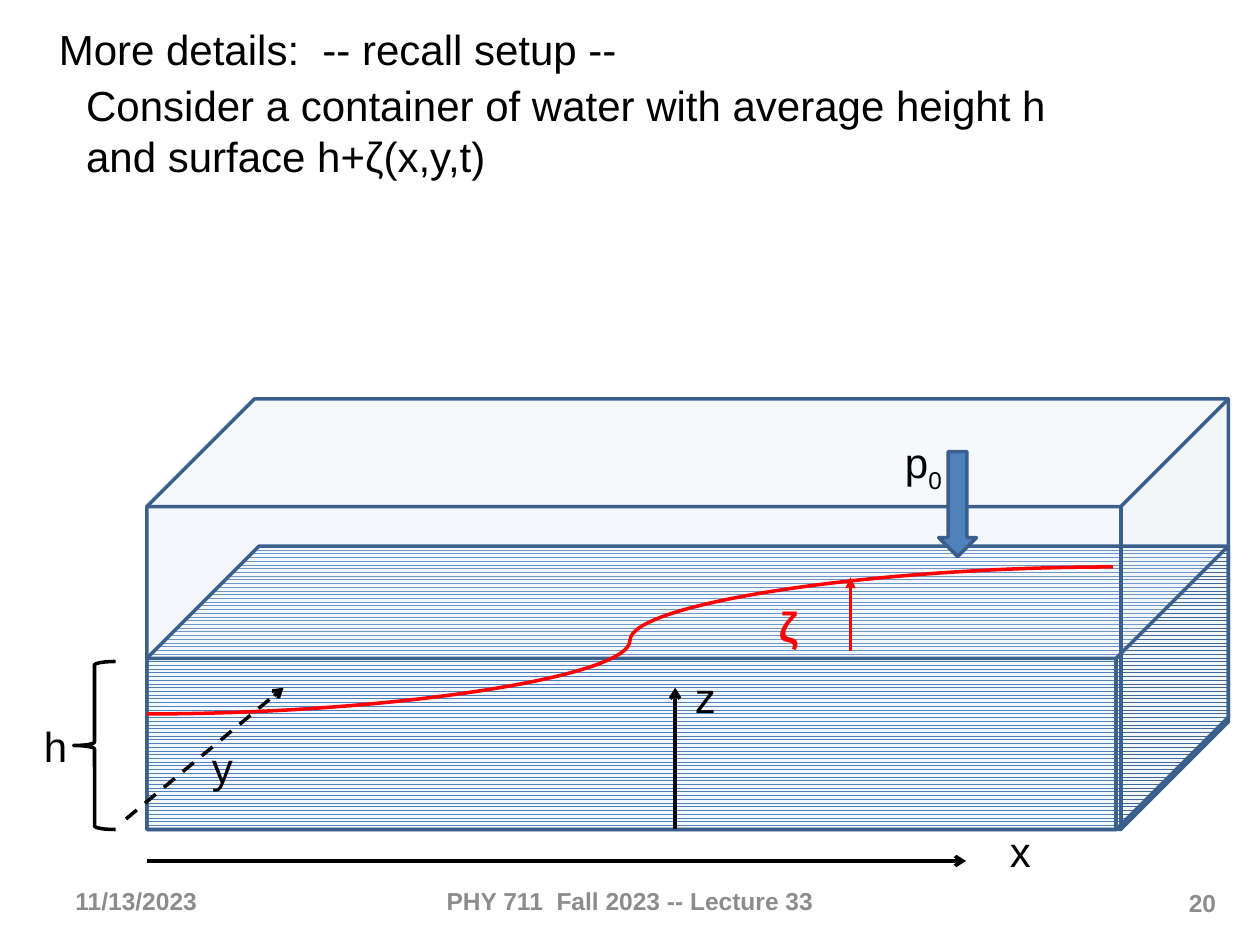
"""Build a lecture slide showing a water container with a surface wave."""
from dataclasses import dataclass
from typing import Optional

import lxml.etree
import pptx
import pptx.dml.color
import pptx.enum.dml
import pptx.enum.shapes
import pptx.enum.text
import pptx.oxml
import pptx.oxml.ns
import pptx.util

RGB = pptx.dml.color.RGBColor
SHAPE = pptx.enum.shapes.MSO_SHAPE
LINK = pptx.enum.shapes.MSO_CONNECTOR
ALIGN = pptx.enum.text.PP_ALIGN
ANCHOR = pptx.enum.text.MSO_ANCHOR
SIZING = pptx.enum.text.MSO_AUTO_SIZE

BLACK = RGB(0x00, 0x00, 0x00)
WHITE = RGB(0xFF, 0xFF, 0xFF)
RED = RGB(0xFF, 0x00, 0x00)
GREY = RGB(0x8C, 0x8C, 0x8C)
BLUE = RGB(0x4F, 0x81, 0xBD)
EDGE = RGB(0x3A, 0x5F, 0x8C)

EMU_PER_PX = 7620
FONT = "Arial"
LINE_WIDTH = 2


@dataclass(frozen=True)
class Frame:
    left: int
    top: int
    width: int
    height: int


@dataclass(frozen=True)
class Label:
    text: str
    frame: Frame
    color: RGB = BLACK
    bold: bool = False
    subscript: str = ""


@dataclass(frozen=True)
class Footer:
    text: str
    frame: Frame
    align: ALIGN


@dataclass(frozen=True)
class Stroke:
    start: tuple[int, int]
    end: tuple[int, int]
    color: RGB = BLACK
    head: Optional[str] = "arrow"
    dashed: bool = False
    kind: LINK = LINK.STRAIGHT


TITLE = Label("More details:  -- recall setup --", Frame(44, 16, 910, 60))
BODY = Label("Consider a container of water with average height h and surface h+ζ(x,y,t)",
             Frame(70, 70, 990, 109))
WATER = Frame(140, 520, 1030, 270)
CONTAINER = Frame(140, 380, 1030, 410)
PRESSURE_ARROW = Frame(894, 430, 36, 100)
HEIGHT_BRACE = Frame(70, 630, 40, 160)

STROKES = [
    Stroke((643, 790), (643, 655)),
    Stroke((140, 820), (920, 820)),
    Stroke((120, 780), (270, 655), dashed=True),
    Stroke((140, 680), (1060, 540), RED, None, kind=LINK.CURVE),
    Stroke((810, 620), (810, 550), RED, "triangle"),
]
LABELS = [
    Label("p", Frame(850, 410, 210, 60), subscript="0"),
    Label("h", Frame(30, 680, 90, 60)),
    Label("z", Frame(650, 634, 80, 60)),
    Label("x", Frame(950, 780, 80, 60)),
    Label("y", Frame(190, 700, 80, 60)),
    Label("ζ", Frame(730, 566, 60, 60), RED, True),
]
FOOTERS = [
    Footer("11/13/2023", Frame(60, 834, 280, 48), ALIGN.LEFT),
    Footer("PHY 711  Fall 2023 -- Lecture 33", Frame(410, 834, 380, 48), ALIGN.CENTER),
    Footer("20", Frame(890, 836, 280, 48), ALIGN.RIGHT),
]


def px(length: int) -> int:
    """Turn px into EMU."""
    return pptx.util.Emu(length * EMU_PER_PX)


def bounds(frame: Frame) -> tuple[int, int, int, int]:
    """Return a frame in EMU."""
    return px(frame.left), px(frame.top), px(frame.width), px(frame.height)


def add_span(para, text: str, size: int, color: RGB, bold: bool = False):
    """Add one formatted run."""
    span = para.add_run()
    span.text = text
    span.font.name = FONT
    span.font.size = pptx.util.Pt(size)
    span.font.bold = bold
    span.font.color.rgb = color
    return span


def fill_placeholder(box, label: Label) -> None:
    """Move a placeholder and set plain left-aligned text in it."""
    box.left, box.top, box.width, box.height = bounds(label.frame)
    box.text_frame.auto_size = SIZING.NONE
    box.text_frame.vertical_anchor = ANCHOR.TOP
    para = box.text_frame.paragraphs[0]
    para.alignment = ALIGN.LEFT
    para.space_before = pptx.util.Pt(0)
    add_span(para, label.text, 24, label.color)
    properties = para._p.get_or_add_pPr()
    properties.set("marL", "0")
    properties.set("indent", "0")
    lxml.etree.SubElement(properties, pptx.oxml.ns.qn("a:buNone"))


def add_box(page, frame: Frame):
    """Add a wrapping text box."""
    box = page.shapes.add_textbox(*bounds(frame))
    box.text_frame.word_wrap = True
    return box


def add_label(page, label: Label) -> None:
    """Add a symbol with an optional subscript."""
    box = add_box(page, label.frame)
    box.text_frame.auto_size = SIZING.SHAPE_TO_FIT_TEXT
    para = box.text_frame.paragraphs[0]
    add_span(para, label.text, 24, label.color, label.bold)
    if label.subscript:
        span = add_span(para, label.subscript, 24, label.color)
        span._r.get_or_add_rPr().set("baseline", "-25000")


def add_footer(page, footer: Footer) -> None:
    """Add one footer text."""
    box = add_box(page, footer.frame)
    box.text_frame.vertical_anchor = ANCHOR.MIDDLE
    para = box.text_frame.paragraphs[0]
    para.alignment = footer.align
    add_span(para, footer.text, 14, GREY, True)


def add_outline(page, kind: SHAPE, frame: Frame, color: RGB = EDGE):
    """Add an unfilled preset shape."""
    shape = page.shapes.add_shape(kind, *bounds(frame))
    shape.shadow.inherit = False
    shape.fill.background()
    shape.line.color.rgb = color
    shape.line.width = pptx.util.Pt(LINE_WIDTH)
    return shape


def add_stroke(page, stroke: Stroke) -> None:
    """Add a line or curve with an optional arrowhead."""
    link = page.shapes.add_connector(stroke.kind, *map(px, stroke.start + stroke.end))
    link.line.color.rgb = stroke.color
    link.line.width = pptx.util.Pt(LINE_WIDTH)
    if stroke.dashed:
        link.line.dash_style = pptx.enum.dml.MSO_LINE.DASH
    if stroke.head:
        tail = lxml.etree.SubElement(link.line._get_or_add_ln(), pptx.oxml.ns.qn("a:tailEnd"))
        tail.set("type", stroke.head)
    lxml.etree.SubElement(link._element.spPr, pptx.oxml.ns.qn("a:effectLst"))


def add_tank(page) -> None:
    """Add the water, its container, the pressure arrow and the brace."""
    water = add_outline(page, SHAPE.CUBE, WATER)
    water.adjustments[0] = 0.396
    water.fill.patterned()
    water.fill.pattern = pptx.enum.dml.MSO_PATTERN.ZIG_ZAG
    water.fill.fore_color.rgb = BLUE
    water.fill.back_color.rgb = WHITE
    container = add_outline(page, SHAPE.CUBE, CONTAINER)
    pressure = add_outline(page, SHAPE.DOWN_ARROW, PRESSURE_ARROW)
    for shape in (container, pressure):
        shape.fill.solid()
        shape.fill.fore_color.rgb = BLUE
    tint = container._element.spPr.find(
        pptx.oxml.ns.qn("a:solidFill")).find(pptx.oxml.ns.qn("a:srgbClr"))
    lxml.etree.SubElement(tint, pptx.oxml.ns.qn("a:alpha")).set("val", "6000")
    add_outline(page, SHAPE.LEFT_BRACE, HEIGHT_BRACE, BLACK)


def main() -> None:
    """Build and save the deck."""
    deck = pptx.Presentation()
    deck.slide_width, deck.slide_height = px(1200), px(900)
    page = deck.slides.add_slide(deck.slide_layouts[1])
    fill_placeholder(page.shapes.title, TITLE)
    fill_placeholder(page.placeholders[1], BODY)
    add_tank(page)
    for items, draw in ((STROKES, add_stroke), (LABELS, add_label), (FOOTERS, add_footer)):
        for item in items:
            draw(page, item)
    deck.save("out.pptx")


if __name__ == "__main__":
    main()
